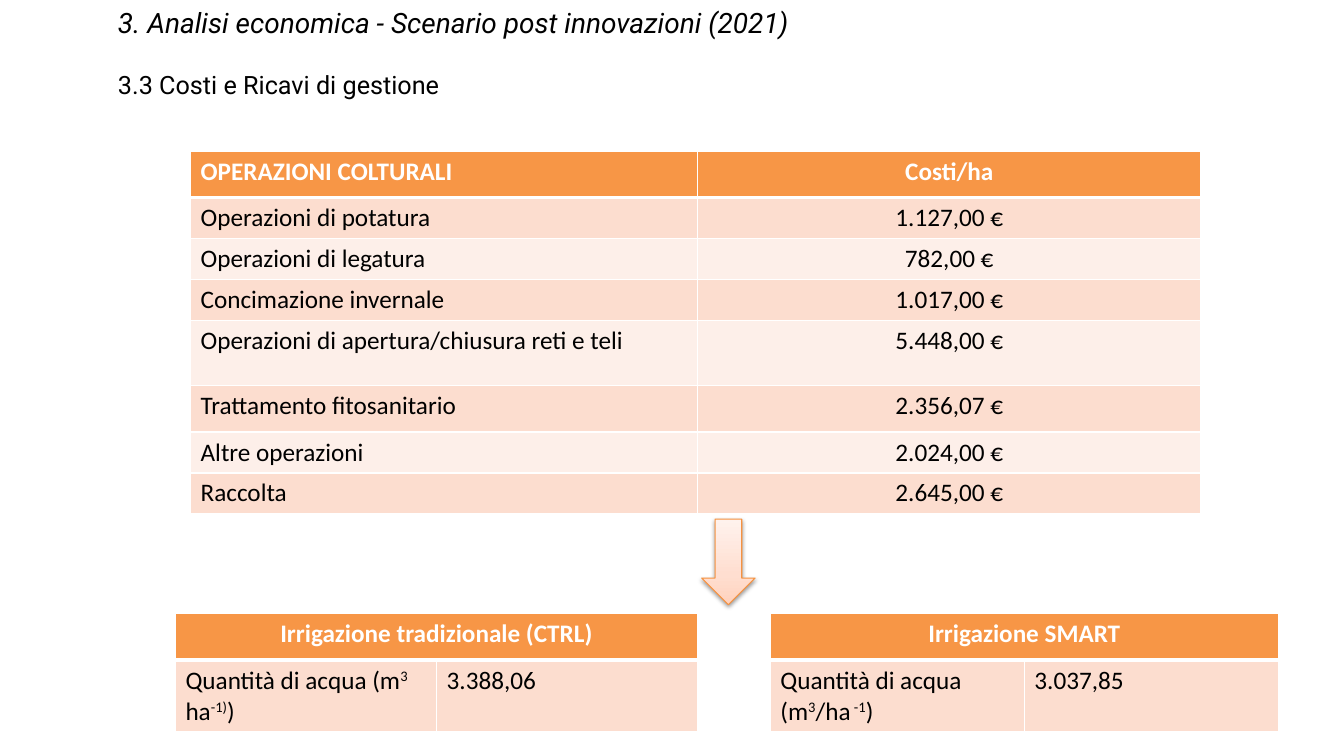
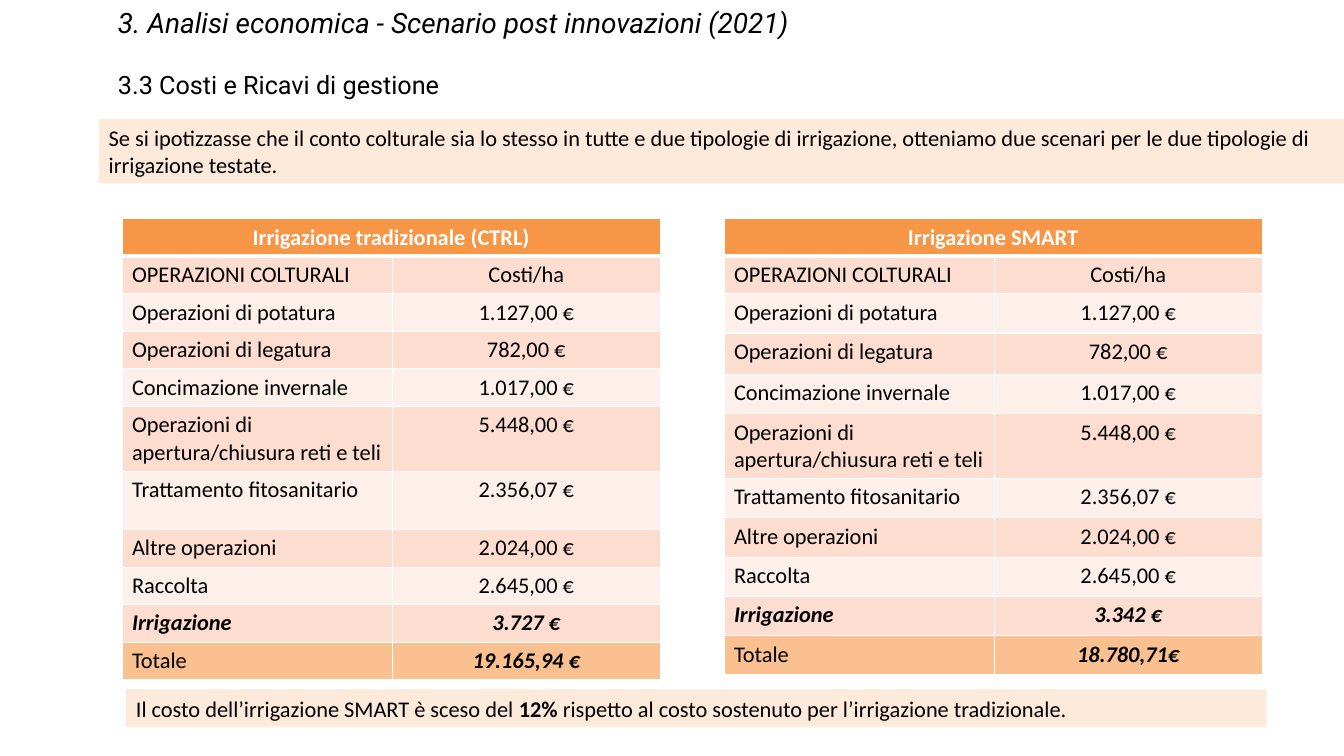
import copy
from dataclasses import dataclass

import pptx
import pptx.dml.color
import pptx.enum.shapes
import pptx.enum.text
import pptx.oxml
import pptx.oxml.ns
import pptx.util
from pptx.util import Inches

ALIGN = pptx.enum.text.PP_ALIGN
ANCHOR = pptx.enum.text.MSO_ANCHOR
SHAPE = pptx.enum.shapes.MSO_SHAPE


@dataclass(frozen=True)
class Theme:
    body_font: str = "Calibri"
    title_font: str = "Roboto"
    title_size: int = 20
    large: int = 18
    small: int = 16
    ink: str = "000000"
    white: str = "FFFFFF"
    header: str = "F79646"
    bands: tuple = ("FCDDCF", "FDEFE9")
    total: str = "FAC090"
    note: str = "FDEADA"
    arrow_line: str = "F69240"
    arrow_stops: tuple = ((0, "FFD2BD"), (0.35, "FFDED0"), (1, "FFF2ED"))


THEME = Theme()

TITLE = "3. Analisi economica - Scenario post innovazioni (2021)"
SUBTITLE = "3.3 Costi e Ricavi di gestione"
COLUMN_NAMES = ("OPERAZIONI COLTURALI", "Costi/ha")
COSTS = [
    ("Operazioni di potatura", "1.127,00 €"),
    ("Operazioni di legatura", "782,00 €"),
    ("Concimazione invernale", "1.017,00 €"),
    ("Operazioni di apertura/chiusura reti e teli", "5.448,00 €"),
    ("Trattamento fitosanitario", "2.356,07 €"),
    ("Altre operazioni", "2.024,00 €"),
    ("Raccolta", "2.645,00 €"),
]
COST_HEIGHTS = [0.46, 0.4, 0.4, 0.4, 0.65, 0.46, 0.4, 0.4]

RAISED = {"raised": True}
STRONG = {"bold": True, "italic": True}
CTRL = "Irrigazione tradizionale (CTRL)"
SMART = "Irrigazione SMART"

WATER = [
    {"name": CTRL, "left": 1.74, "column": 2.59, "amount": "3.388,06",
     "label": [("Quantità di acqua (m", {}), ("3 ", RAISED), ("ha", {}),
               ("-1)", RAISED), (")", {})]},
    {"name": SMART, "left": 7.64, "column": 2.52, "amount": "3.037,85",
     "label": [("Quantità di acqua (m", {}), ("3", RAISED), ("/ha", {}),
               (" -1", RAISED), (")", {})]},
]
SCENARIOS = [
    {"name": CTRL, "left": 1.21, "irrigation": "3.727 €", "total": "19.165,94 €",
     "heights": [0.37] * 5 + [0.64, 0.58] + [0.37] * 4},
    {"name": SMART, "left": 7.18, "irrigation": "3.342 €", "total": "18.780,71€",
     "heights": [0.37, 0.37, 0.39, 0.41, 0.39, 0.63] + [0.39] * 5},
]
NOTES = [
    ((0.98, 1.18, 12.35, 0.64),
     [("Se si ipotizzasse che il conto colturale sia lo stesso in tutte e due "
       "tipologie di irrigazione, otteniamo due scenari per le due tipologie di "
       "irrigazione testate.", {})]),
    ((1.25, 6.84, 11.31, 0.37),
     [("Il costo dell’irrigazione SMART è sceso del ", {}),
      ("12%", {"bold": True}),
      (" rispetto al costo sostenuto per l’irrigazione tradizionale.", {})]),
]


def rgb(code):
    return pptx.dml.color.RGBColor.from_string(code)


def add_text(para, text, size=THEME.large, font=THEME.body_font, color=THEME.ink,
             bold=False, italic=False, raised=False):
    span = para.add_run()
    span.text = text
    span.font.size = pptx.util.Pt(size)
    span.font.name = font
    span.font.bold = bold
    span.font.italic = italic
    span.font.color.rgb = rgb(color)
    if raised:
        span.font._element.set("baseline", "30000")


def add_spans(para, content, **style):
    spans = [(content, {})] if isinstance(content, str) else content
    for text, extra in spans:
        add_text(para, text, **{**style, **extra})


def xml(source):
    return pptx.oxml.parse_xml(
        source.replace(">", f' {pptx.oxml.ns.nsdecls("a")}>', 1))


def set_borders(cell, top, bottom):
    properties = cell._tc.get_or_add_tcPr()
    widths = {"L": 1, "R": 1, "T": top, "B": bottom}
    for index, (side, width) in enumerate(widths.items()):
        properties.insert(index, xml(
            f'<a:ln{side} w="{width * 12700}"><a:solidFill>'
            f'<a:srgbClr val="{THEME.white}"/></a:solidFill></a:ln{side}>'))


def add_table(slide, left, top, widths, heights, rows, size=THEME.large,
              value_align=ALIGN.CENTER, total=False):
    frame = slide.shapes.add_table(
        len(rows), len(widths), Inches(left), Inches(top),
        Inches(sum(widths)), Inches(sum(heights)))
    table = frame.table
    for column, width in zip(table.columns, widths):
        column.width = Inches(width)
    for index, (values, height) in enumerate(zip(rows, heights)):
        table.rows[index].height = Inches(height)
        header = index == 0
        if header:
            fill = THEME.header
        elif total and index == len(rows) - 1:
            fill = THEME.total
        else:
            fill = THEME.bands[(index - 1) % 2]
        for position in range(len(widths)):
            cell = table.cell(index, position)
            set_borders(cell, 3 if index == 1 else 1, 3 if header else 1)
            cell.fill.solid()
            cell.fill.fore_color.rgb = rgb(fill)
        if len(values) == 1:
            table.cell(index, 0).merge(table.cell(index, len(widths) - 1))
        for position, value in enumerate(values):
            para = table.cell(index, position).text_frame.paragraphs[0]
            if header and (position or len(values) == 1):
                para.alignment = ALIGN.CENTER
            else:
                para.alignment = value_align if position else ALIGN.LEFT
            add_spans(para, value, size=size, bold=header,
                      color=THEME.white if header else THEME.ink)


def fill_heading(box, place, text, **style):
    box.left, box.top, box.width, box.height = map(Inches, place)
    frame = box.text_frame
    frame.auto_size = pptx.enum.text.MSO_AUTO_SIZE.NONE
    frame.vertical_anchor = ANCHOR.MIDDLE
    para = frame.paragraphs[0]
    properties = para._p.get_or_add_pPr()
    properties.set("marL", "0")
    properties.set("indent", "0")
    properties.append(xml("<a:buNone></a:buNone>"))
    para.alignment = ALIGN.LEFT
    para.space_before = pptx.util.Pt(0)
    add_text(para, text, font=THEME.title_font, **style)


def add_page(deck):
    page = deck.slides.add_slide(deck.slide_layouts[1])
    fill_heading(page.shapes.title, (1.07, 0, 8.48, 0.45), TITLE,
                 size=THEME.title_size, italic=True)
    fill_heading(page.placeholders[1], (1.07, 0.64, 8.48, 0.4), SUBTITLE)
    return page


def add_arrow(page):
    arrow = page.shapes.add_shape(SHAPE.DOWN_ARROW, Inches(6.96), Inches(5.15),
                                  Inches(0.53), Inches(0.85))
    arrow.fill.gradient()
    arrow.fill.gradient_angle = 90
    first = arrow.fill.gradient_stops[0]._gs
    first.addnext(copy.deepcopy(first))
    for stop, (position, color) in zip(arrow.fill.gradient_stops, THEME.arrow_stops):
        stop.position = position
        stop.color.rgb = rgb(color)
    arrow.line.color.rgb = rgb(THEME.arrow_line)
    arrow.line.width = pptx.util.Pt(0.75)
    arrow.shadow.inherit = False
    effects = arrow._element.spPr.find(pptx.oxml.ns.qn("a:effectLst"))
    effects.append(xml(
        '<a:outerShdw blurRad="40000" dist="20000" dir="5400000" rotWithShape="0">'
        f'<a:srgbClr val="{THEME.ink}"><a:alpha val="38000"/></a:srgbClr>'
        '</a:outerShdw>'))


def add_note(page, place, content):
    box = page.shapes.add_shape(SHAPE.RECTANGLE, *map(Inches, place))
    box.shadow.inherit = False
    box.fill.solid()
    box.fill.fore_color.rgb = rgb(THEME.note)
    box.line.fill.background()
    box.text_frame.word_wrap = True
    box.text_frame.vertical_anchor = ANCHOR.MIDDLE
    para = box.text_frame.paragraphs[0]
    para.alignment = ALIGN.LEFT
    add_spans(para, content, size=THEME.small)


def build_costs(deck):
    page = add_page(deck)
    add_table(page, 1.89, 1.5, (5.03, 4.99), COST_HEIGHTS, [COLUMN_NAMES] + COSTS)
    add_arrow(page)
    for water in WATER:
        add_table(page, water["left"], 6.09, (water["column"],) * 2, (0.46, 0.7),
                  [(water["name"],), (water["label"], water["amount"])],
                  value_align=ALIGN.LEFT)


def build_scenarios(deck):
    page = add_page(deck)
    for scenario in SCENARIOS:
        rows = [(scenario["name"],), COLUMN_NAMES, *COSTS,
                ([("Irrigazione", STRONG)], [(scenario["irrigation"], STRONG)]),
                ("Totale", [(scenario["total"], STRONG)])]
        add_table(page, scenario["left"], 2.17, (2.68, 2.66), scenario["heights"],
                  rows, size=THEME.small, total=True)
    for place, content in NOTES:
        add_note(page, place, content)


def main():
    deck = pptx.Presentation()
    deck.slide_width = Inches(13.33)
    deck.slide_height = Inches(7.5)
    build_costs(deck)
    build_scenarios(deck)
    deck.save("out.pptx")


if __name__ == "__main__":
    main()
